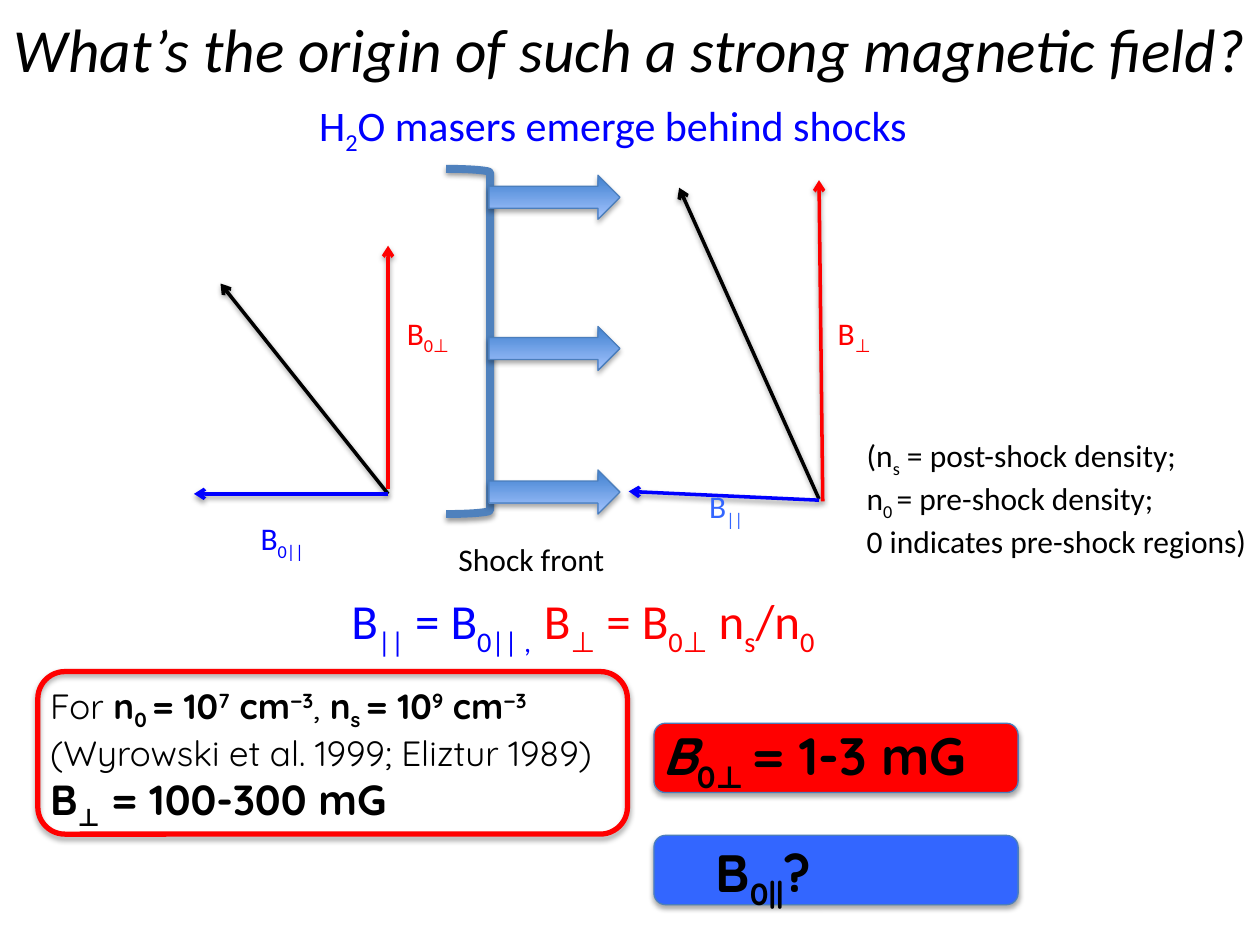
"""Build the slide on the origin of strong magnetic fields behind shocks."""
from dataclasses import dataclass
from typing import NamedTuple

from lxml import etree
from pptx import Presentation
from pptx import util as u
from pptx.dml.color import RGBColor
from pptx.enum import shapes, text
from pptx.oxml import ns

COLS, ROWS = 100, 75
Kind = shapes.MSO_SHAPE
Align = text.PP_ALIGN


@dataclass(frozen=True)
class Theme:
    """Fonts, colours and type sizes."""
    body: str = "Calibri"
    accent: str = "Quicksand"
    black: str = "000000"
    blue: str = "0000FF"
    sky: str = "3366FF"
    red: str = "FF0000"
    front: str = "4F81BD"
    edge: str = "4B7EBC"
    dark: str = "3F80CE"
    light: str = "A4C4FF"
    title: int = 35
    subtitle: int = 24
    equation: int = 28
    label: int = 18
    given: int = 20
    derived: int = 24
    result: int = 30


T = Theme()


class Box(NamedTuple):
    """A place on the grid in columns and rows."""
    x: float
    y: float
    w: float
    h: float


class Run(NamedTuple):
    """A piece of text with what sets it apart."""
    text: str
    base: int = 0
    bold: bool = False
    italic: bool = False
    color: str | None = None
    size: int | None = None


class Vector(NamedTuple):
    """A field arrow from its foot to its head."""
    x1: float
    y1: float
    x2: float
    y2: float
    color: str


class Label(NamedTuple):
    """A field symbol with its subscript."""
    box: Box
    sub: str
    color: str


class Result(NamedTuple):
    """A filled panel and the text over it."""
    panel: Box
    fill: str
    box: Box
    runs: list[Run]


def sub(t: str, **kw) -> Run:
    """Return a subscript run."""
    return Run(t, -25, **kw)


def sup(t: str, **kw) -> Run:
    """Return a superscript run."""
    return Run(t, 30, **kw)


def bold(*runs: Run, size: int | None = None) -> list[Run]:
    """Return the runs in bold."""
    return [r._replace(bold=True, size=size) for r in runs]


def place(prs, box: Box) -> list[int]:
    """Turn grid units into slide lengths."""
    cw, rh = prs.slide_width / COLS, prs.slide_height / ROWS
    return [round(v * k) for v, k in zip(box, (cw, rh, cw, rh))]


def write(tf, paras: list[list[Run]], *, size: int, font: str = T.body,
          color: str = T.black, align=None) -> None:
    """Fill a text frame with paragraphs of runs."""
    for i, runs in enumerate(paras):
        p = tf.paragraphs[0] if i == 0 else tf.add_paragraph()
        p.alignment = align
        for run in runs:
            r = p.add_run()
            r.text = run.text
            f = r.font
            f.name, f.size = font, u.Pt(run.size or size)
            f.bold, f.italic = run.bold, run.italic
            f.color.rgb = RGBColor.from_string(run.color or color)
            if run.base:
                r._r.get_or_add_rPr().set("baseline", str(run.base * 1000))


def add_text(prs, s, box: Box, paras: list[list[Run]], *, wrap: bool = True, **fmt) -> None:
    """Add a text box that grows with its text."""
    tf = s.shapes.add_textbox(*place(prs, box)).text_frame
    tf.word_wrap = wrap
    tf.auto_size = text.MSO_AUTO_SIZE.SHAPE_TO_FIT_TEXT
    write(tf, paras, **fmt)


def add_shadow(sp, alpha: int, dist: float) -> None:
    """Give a shape a soft shadow straight below it."""
    fx = etree.SubElement(sp._element.spPr, ns.qn("a:effectLst"))
    sh = etree.SubElement(fx, ns.qn("a:outerShdw"), blurRad=str(u.Pt(3.1)),
                          dist=str(u.Pt(dist)), dir="5400000", rotWithShape="0")
    clr = etree.SubElement(sh, ns.qn("a:srgbClr"), val=T.black)
    etree.SubElement(clr, ns.qn("a:alpha"), val=str(alpha * 1000))


def add_shape(prs, s, kind, box: Box, *, line: str, width: float = 0.75,
              fill: str | None = None, alpha: int = 35, dist: float = 1.8):
    """Add a preset shape with its outline, fill and shadow."""
    sp = s.shapes.add_shape(kind, *place(prs, box))
    if fill:
        sp.fill.solid()
        sp.fill.fore_color.rgb = RGBColor.from_string(fill)
    else:
        sp.fill.background()
    sp.line.color.rgb = RGBColor.from_string(line)
    sp.line.width = u.Pt(width)
    add_shadow(sp, alpha, dist)
    return sp


def add_vector(prs, s, v: Vector) -> None:
    """Add a field arrow."""
    c = s.shapes.add_connector(shapes.MSO_CONNECTOR.STRAIGHT, *place(prs, Box(*v[:4])))
    c.line.color.rgb = RGBColor.from_string(v.color)
    c.line.width = u.Pt(2)
    etree.SubElement(c.line._get_or_add_ln(), ns.qn("a:tailEnd"), type="arrow")
    add_shadow(c, 38, 1.6)


def add_flow(prs, s, y: float) -> None:
    """Add a block arrow leaving the shock front."""
    sp = add_shape(prs, s, Kind.LEFT_ARROW, Box(38.8, y, 10.4, 3.5), line=T.edge)
    sp.rotation = 180
    sp.fill.gradient()
    sp.fill.gradient_angle = 90
    for stop, color in zip(sp.fill.gradient_stops, (T.dark, T.light)):
        stop.color.rgb = RGBColor.from_string(color)


VECTORS = [
    Vector(30.8, 39.2, 17.5, 22.5, T.black), Vector(30.8, 39.2, 15.4, 39.2, T.blue),
    Vector(30.8, 38.8, 30.8, 19.5, T.red), Vector(65, 39.6, 53.9, 14.9, T.black),
    Vector(65, 39.7, 49.9, 39, T.blue), Vector(65.3, 39.8, 65, 14.3, T.red),
]
LABELS = [
    Label(Box(31.3, 24.4, 7.5, 5.6), "0⊥", T.red), Label(Box(65.5, 24.4, 6.4, 5.6), "⊥", T.red),
    Label(Box(55.3, 38.2, 6.2, 5.6), "||", T.sky), Label(Box(19.7, 40.7, 7.3, 5.6), "0||", T.blue),
]
EQUATION = [Run("B"), sub("||"), Run(" = B"), sub("0|| ,  ")] + [
    r._replace(color=T.red) for r in (
        Run("B"), sub("⊥"), Run(" = B"), sub("0⊥"), Run(" n"), sub("s"), Run("/n"), sub("0 "))]
ESTIMATE = [
    [Run("For "), *bold(Run("n"), sub("0 "), Run("= 10"), sup("7"), Run(" cm"), sup("−3")),
     Run(", "), *bold(Run("n"), sub("s "), Run("= 10"), sup("9"), Run(" cm"), sup("−3 "))],
    [Run("(Wyrowski et al. 1999; Eliztur 1989)")],
    bold(Run("B"), sub("⊥"), Run(" = 100-300 mG"), size=T.derived),
]
RESULTS = [
    Result(Box(51.9, 57.4, 28.9, 5.5), T.red, Box(51.6, 56.9, 30.8, 6.1),
           bold(Run("B", italic=True), sub("0⊥ "), Run("= 1-3 mG "))),
    Result(Box(51.9, 66.3, 28.9, 5.5), T.sky, Box(55.8, 66.2, 15.8, 9.1),
           bold(Run("B"), sub("0||"), Run("?"))),
]
LEGEND = [
    [Run("(n"), sub("s"), Run(" = post-shock density; ")],
    [Run("n"), sub("0 "), Run("= pre-shock density; ")],
    [Run("0 indicates pre-shock regions) ")],
]


def main() -> None:
    """Build and save the slide."""
    prs = Presentation()
    prs.slide_width, prs.slide_height = u.Inches(10), u.Inches(7.5)
    s = prs.slides.add_slide(prs.slide_layouts[5])

    title = s.shapes.title
    title.left, title.top, title.width, title.height = place(prs, Box(0, -4.2, 100, 16.1))
    title.text_frame.vertical_anchor = text.MSO_ANCHOR.MIDDLE
    title.text_frame.auto_size = text.MSO_AUTO_SIZE.NONE
    write(title.text_frame, [[Run("What’s the origin of such a strong magnetic field?", italic=True)]],
          size=T.title, align=Align.CENTER)
    add_text(prs, s, Box(4.5, 7.4, 88.3, 5), [[Run("H"), sub("2"), Run("O masers emerge behind shocks")]],
             size=T.subtitle, color=T.blue, align=Align.CENTER)
    add_text(prs, s, Box(26.9, 46.4, 50, 5.7), [EQUATION],
             size=T.equation, color=T.blue, align=Align.JUSTIFY)

    add_shape(prs, s, Kind.RIGHT_BRACKET, Box(35.4, 13.4, 3.5, 27.4),
              line=T.front, width=4.5, alpha=38, dist=1.6)
    for y in (13.9, 25.9, 37.3):
        add_flow(prs, s, y)
    add_text(prs, s, Box(35.4, 42.4, 22.1, 5.6), [[Run("Shock front")]], size=T.label)
    for v in VECTORS:
        add_vector(prs, s, v)
    for lb in LABELS:
        add_text(prs, s, lb.box, [[Run("B"), sub(lb.sub)]], wrap=False, size=T.label, color=lb.color)

    add_shape(prs, s, Kind.ROUNDED_RECTANGLE, Box(3, 53.3, 46.8, 12.9), line=T.red, width=3)
    add_text(prs, s, Box(3, 53.8, 47, 11.8), ESTIMATE,
             size=T.given, font=T.accent, align=Align.JUSTIFY)
    for res in RESULTS:
        add_shape(prs, s, Kind.ROUNDED_RECTANGLE, res.panel, line=T.edge, fill=res.fill)
        add_text(prs, s, res.box, [res.runs], size=T.result, font=T.accent, align=Align.JUSTIFY)
    add_text(prs, s, Box(67.8, 34.1, 33.9, 10.1), LEGEND, size=T.label, align=Align.JUSTIFY)
    prs.save("out.pptx")


if __name__ == "__main__":
    main()
